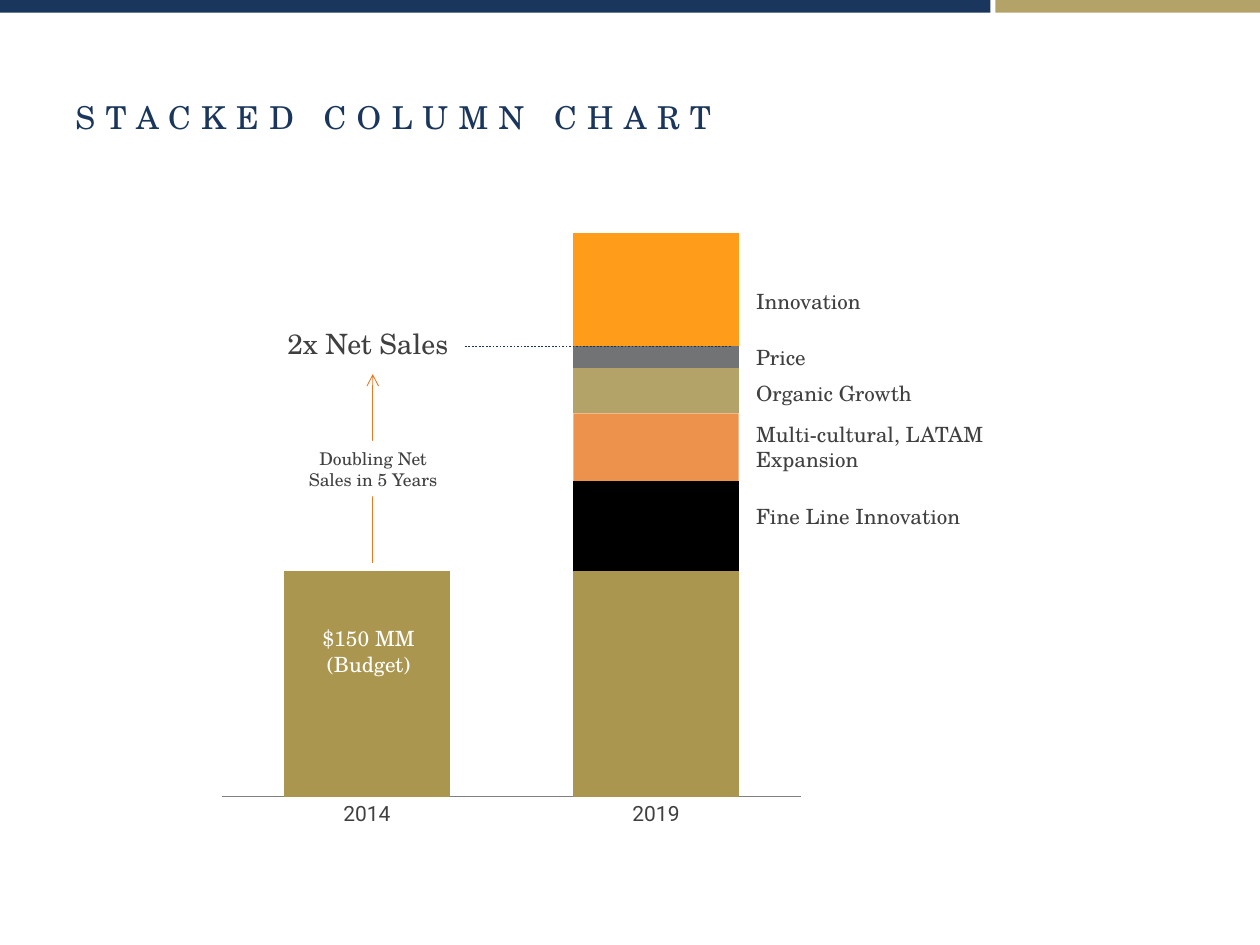
from dataclasses import dataclass
from typing import Optional

from lxml import etree
from pptx import Presentation
from pptx import util as u
from pptx.chart.data import CategoryChartData
from pptx.dml.color import RGBColor
from pptx.enum import chart as ch
from pptx.enum import dml, shapes, text
from pptx.oxml import parse_xml
from pptx.oxml.ns import nsdecls, qn

Pt = u.Pt


@dataclass(frozen=True)
class Theme:
    serif: str = "TeX Gyre Schola"
    sans: str = "Roboto"
    navy: str = "1A365D"
    band_navy: str = "1B365D"
    gold: str = "B3A369"
    olive: str = "AB964F"
    orange: str = "E87721"
    amber: str = "FF9D1A"
    gray: str = "717375"
    black: str = "000000"
    white: str = "FFFFFF"
    ink: str = "404040"
    axis: str = "808080"
    title_size: float = 18
    callout_size: float = 16
    body_size: float = 12
    note_size: float = 10


@dataclass(frozen=True)
class Box:
    left: float
    top: float
    width: float
    height: float

    def lengths(self) -> list:
        return [Pt(v) for v in (self.left, self.top, self.width, self.height)]


@dataclass(frozen=True)
class Layer:
    """One series of the stack, with its label and the label's centre height."""
    values: tuple
    color: str
    label: str = ""
    center: float = 0
    opacity: Optional[int] = None


@dataclass(frozen=True)
class Rule:
    start: tuple
    end: tuple
    color: str
    width: float
    dotted: bool = False
    arrow: bool = False


T = Theme()
LAYERS = [
    Layer((100, 100), T.olive),
    Layer((None, 40), T.black, "Fine Line Innovation", 294.8),
    Layer((None, 30), T.orange, "Multi-cultural, LATAM Expansion", 255.2, 80),
    Layer((None, 20), T.gold, "Organic Growth", 224.6),
    Layer((None, 10), T.gray, "Price", 204.1),
    Layer((None, 50), T.amber, "Innovation", 172.1),
]
LABEL_LEFT, LABEL_WIDTH, LABEL_HEIGHT = 432, 165, 22


def apply(target, values: dict) -> None:
    for name, value in values.items():
        setattr(target, name, value)


def rgb(color: str) -> RGBColor:
    return RGBColor.from_string(color)


def paint(shape, color: str) -> None:
    shape.fill.solid()
    shape.fill.fore_color.rgb = rgb(color)
    shape.line.fill.background()
    shape.shadow.inherit = False


def write(shape, words: str, size: float, color: str = T.ink, centered: bool = False,
          middle: bool = True, inset: bool = True, spacing: float = 0) -> None:
    frame = shape.text_frame
    anchor = text.MSO_ANCHOR.MIDDLE if middle else text.MSO_ANCHOR.TOP
    apply(frame, {"word_wrap": True, "vertical_anchor": anchor})
    if not inset:
        apply(frame, {f"margin_{side}": 0 for side in ("left", "top", "right", "bottom")})
    line = frame.paragraphs[0]
    line.alignment = text.PP_ALIGN.CENTER if centered else text.PP_ALIGN.LEFT
    run = line.add_run()
    run.text = words
    apply(run.font, {"name": T.serif, "size": Pt(size)})
    run.font.color.rgb = rgb(color)
    if spacing:
        run.font._element.set("spc", str(int(spacing * 100)))


def add_text(slide, box: Box, words: str, size: float, **style) -> None:
    write(slide.shapes.add_textbox(*box.lengths()), words, size, **style)


def add_block(slide, box: Box, color: str):
    block = slide.shapes.add_shape(shapes.MSO_SHAPE.RECTANGLE, *box.lengths())
    paint(block, color)
    return block


def add_rule(slide, rule: Rule) -> None:
    ends = [Pt(v) for v in rule.start + rule.end]
    connector = slide.shapes.add_connector(shapes.MSO_CONNECTOR.STRAIGHT, *ends)
    connector.line.color.rgb = rgb(rule.color)
    connector.line.width = Pt(rule.width)
    if rule.dotted:
        connector.line.dash_style = dml.MSO_LINE.ROUND_DOT
    if rule.arrow:
        etree.SubElement(connector.line._get_or_add_ln(), qn("a:tailEnd"), type="arrow")
    etree.SubElement(connector._element.spPr, qn("a:effectLst"))


def add_stack(slide, box: Box, layers: list) -> None:
    data = CategoryChartData()
    data.categories = ["2014", "2019"]
    for number, layer in enumerate(layers, 1):
        data.add_series(f"Series {number}", layer.values)
    chart = slide.shapes.add_chart(ch.XL_CHART_TYPE.COLUMN_STACKED, *box.lengths(), data).chart
    apply(chart, {"has_legend": False, "has_title": False})
    apply(chart.font, {"name": T.sans, "size": Pt(T.body_size)})
    chart.font.color.rgb = rgb(T.ink)

    # Axes
    apply(chart.value_axis, {"minimum_scale": 0, "maximum_scale": 250,
                             "has_major_gridlines": False, "visible": False})
    years = chart.category_axis
    apply(years, {"major_tick_mark": ch.XL_TICK_MARK.NONE, "has_major_gridlines": False})
    years.format.line.color.rgb = rgb(T.axis)
    years.format.line.width = Pt(0.75)

    # Columns
    plot = chart.plots[0]
    apply(plot, {"gap_width": 75, "overlap": 100, "vary_by_categories": False})
    for series, layer in zip(plot.series, layers):
        series.invert_if_negative = False
        fill = series.format.fill
        fill.solid()
        fill.fore_color.rgb = rgb(layer.color)
        if layer.opacity:
            color = series._element.spPr.find(".//" + qn("a:srgbClr"))
            etree.SubElement(color, qn("a:alpha"), val=str(layer.opacity * 1000))

    # Fixed plot area, so that the columns line up with the labels
    area = chart._chartSpace.chart.plotArea
    for old in area.findall(qn("c:layout")):
        area.remove(old)
    parts = {"layoutTarget": "inner", "xMode": "edge", "yMode": "edge",
             "x": 0.02, "y": 0.02, "w": 0.96, "h": 0.91}
    inner = "".join(f'<c:{name} val="{value}"/>' for name, value in parts.items())
    area.insert(0, parse_xml(f"<c:layout {nsdecls('c')}><c:manualLayout>{inner}"
                             "</c:manualLayout></c:layout>"))


def main() -> None:
    deck = Presentation()
    apply(deck, {"slide_width": Pt(720), "slide_height": Pt(540)})
    slide = deck.slides.add_slide(deck.slide_layouts[6])

    # Top band and title
    add_block(slide, Box(0, 0, 566, 7.2), T.band_navy)
    add_block(slide, Box(568.8, 0, 151.2, 7.2), T.gold)
    add_text(slide, Box(36, 21.6, 648, 90), "STACKED COLUMN CHART", T.title_size,
             color=T.navy, spacing=6)

    # Chart with its labels
    add_stack(slide, Box(120.2, 126, 344.2, 354.2), LAYERS)
    add_text(slide, Box(164.2, 354.2, 92.9, 23.8), "$150 MM (Budget)", T.body_size,
             color=T.white, centered=True, middle=False)
    for layer in LAYERS:
        if layer.label:
            box = Box(LABEL_LEFT, layer.center - LABEL_HEIGHT / 2, LABEL_WIDTH, LABEL_HEIGHT)
            add_text(slide, box, layer.label, T.body_size, inset=False)

    # Doubling callout
    add_text(slide, Box(141.8, 182.9, 136.8, 26.6), "2x Net Sales", T.callout_size,
             centered=True, middle=False)
    add_rule(slide, Rule((265.7, 198), (418.3, 198), T.navy, 1, dotted=True))
    add_rule(slide, Rule((213, 321.8), (213, 213.8), T.orange, 0.5, arrow=True))
    note = add_block(slide, Box(162, 252, 102.2, 31.7), T.white)
    write(note, "Doubling Net Sales in 5 Years", T.note_size, centered=True)

    deck.save("out.pptx")


if __name__ == "__main__":
    main()
